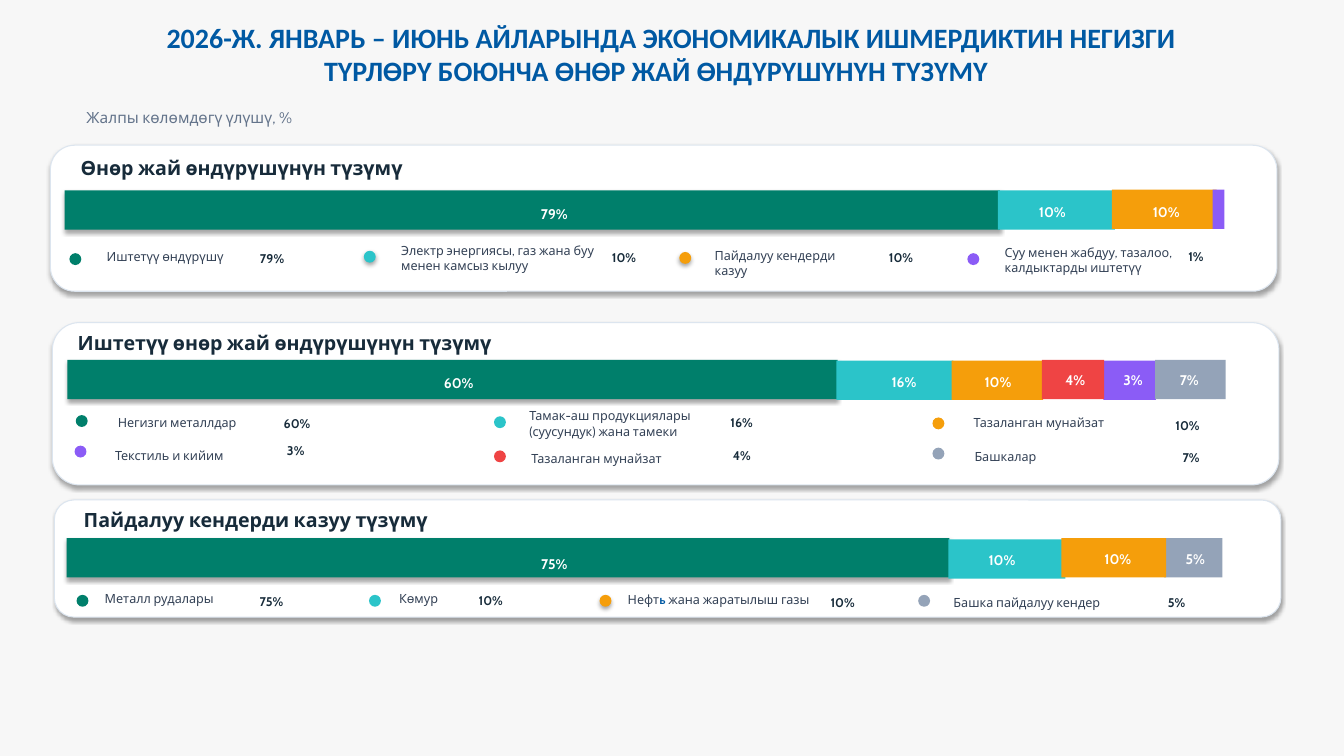
import pptx
import pptx.util
import pptx.dml.color
import pptx.enum.shapes
import pptx.enum.text
import lxml.etree
from pptx.util import Cm

HUES = {
    "back": "F7F7F7", "white": "FFFFFF", "edge": "DCE5EF", "blue": "0059A3",
    "ink": "172B3A", "text": "334155", "note": "64748B",
    "green": "007F6B", "teal": "2BC4C9", "gold": "F59E0B",
    "violet": "8B5CF6", "red": "EF4444", "grey": "94A3B8",
}
RGB = {k: pptx.dml.color.RGBColor.from_string(v) for k, v in HUES.items()}
KIND = pptx.enum.shapes.MSO_SHAPE
SIDE = pptx.enum.text.PP_ALIGN
SHADE = (
    '<a:effectLst xmlns:a="http://schemas.openxmlformats.org/drawingml/2006/main">'
    '<a:outerShdw blurRad="39370" dist="22860" dir="5400000" algn="tl" rotWithShape="0">'
    '<a:srgbClr val="000000"><a:alpha val="35000"/></a:srgbClr>'
    '</a:outerShdw></a:effectLst>'
)

deck = pptx.Presentation()
deck.slide_width, deck.slide_height = Cm(33.87), Cm(19.05)
slide = deck.slides.add_slide(deck.slide_layouts[6])
slide.background.fill.solid()
slide.background.fill.fore_color.rgb = RGB["back"]


def draw(kind, x, y, w, h, hue, edge=None, shade=False):
    shape = slide.shapes.add_shape(kind, Cm(x), Cm(y), Cm(w), Cm(h))
    shape.fill.solid()
    shape.fill.fore_color.rgb = RGB[hue]
    if edge:
        shape.line.color.rgb = RGB[edge]
        shape.line.width = pptx.util.Pt(0.75)
    else:
        shape.line.fill.background()
    shape.shadow.inherit = False
    if shade:
        props = shape.shadow._element
        old = props.find(pptx.oxml.ns.qn("a:effectLst"))
        props.replace(old, lxml.etree.fromstring(SHADE))


def write(words, x, y, w, size, hue, bold=False, side=SIDE.LEFT, h=0.43, font="Cabin"):
    """Place text; a part between bars is set in bold blue."""
    box = slide.shapes.add_textbox(Cm(x), Cm(y), Cm(w), Cm(h))
    frame = box.text_frame
    frame.word_wrap = True
    frame.margin_left = frame.margin_right = frame.margin_top = frame.margin_bottom = 0
    parts = words.split("|")
    frame.text = parts[0]
    for part in parts[1:]:
        frame.paragraphs[-1].add_run().text = part
    for para in frame.paragraphs:
        para.alignment = side
        for i, run in enumerate(para.runs):
            mark = i % 2 == 1
            run.font.name = "Calibri" if mark else font
            run.font.size = pptx.util.Pt(size)
            run.font.bold = bold or mark
            run.font.color.rgb = RGB["blue" if mark else hue]
    return frame


# Heading
head = write(
    "2026-Ж. ЯНВАРЬ – ИЮНЬ АЙЛАРЫНДА ЭКОНОМИКАЛЫК ИШМЕРДИКТИН НЕГИЗГИ "
    "ТҮРЛӨРҮ БОЮНЧА ӨНӨР ЖАЙ ӨНДҮРҮШҮНҮН ТҮЗҮМҮ",
    3, 0.33, 27.08, 20, "blue", True, SIDE.CENTER, 2.06, "Calibri")
head.vertical_anchor = pptx.enum.text.MSO_ANCHOR.MIDDLE
head.paragraphs[0]._p.get_or_add_pPr().set("indent", str(Cm(0.76)))
write("Жалпы көлөмдөгү үлүшү, %", 2.18, 2.72, 30.68, 11, "note")

# Panels: card (x, y, h), title (words, x, y),
# bars (hue, x, y, w, share, label centre, label y),
# keys (hue, dot x, dot y, shade, words, x, y, share, right edge, share y)
panels = [
    ((1.27, 3.66, 3.68), ("Өнөр жай өндүрүшүнүн түзүмү", 2.03, 3.94), [
        ("green", 1.63, 4.8, 23.57, 79, 13.97, 5.18),
        ("teal", 25.15, 4.8, 2.95, 10, 26.52, 5.13),
        ("gold", 28.02, 4.78, 2.64, 10, 29.39, 5.13),
        ("violet", 30.56, 4.78, 0.3, None, 0, 0),
    ], [
        ("green", 1.75, 6.38, False, "Иштетүү өндүрүшү", 2.69, 6.27, 79, 7.16, 6.32),
        ("teal", 9.17, 6.32, True, "Электр энергиясы, газ жана буу менен камсыз кылуу",
         10.11, 6.12, 10, 16.03, 6.3),
        ("gold", 17.12, 6.35, True, "Пайдалуу кендерди\nказуу",
         18.01, 6.25, 10, 23.01, 6.3),
        ("violet", 24.38, 6.38, False, "Суу менен жабдуу, тазалоо, калдыктарды иштетүү",
         25.32, 6.17, 1, 30.33, 6.27),
    ]),
    ((1.32, 8.13, 4.09), ("Иштетүү өнөр жай өндүрүшүнүн түзүмү", 1.96, 8.33), [
        ("green", 1.7, 9.07, 19.41, 60, 11.56, 9.45),
        ("teal", 21.08, 9.09, 2.95, 16, 22.78, 9.4),
        ("gold", 23.98, 9.09, 2.31, 10, 25.15, 9.42),
        ("violet", 27.81, 9.09, 1.32, 3, 28.55, 9.37),
        ("red", 26.26, 9.07, 1.57, 4, 27.1, 9.35),
        ("grey", 29.11, 9.07, 1.78, 7, 29.97, 9.35),
    ], [
        ("green", 1.91, 10.46, False, "Негизги металлдар", 2.97, 10.46, 60, 7.82, 10.49),
        ("violet", 1.88, 11.23, False, "Текстиль и кийим", 2.9, 11.28, 3, 7.67, 11.15),
        ("teal", 12.45, 10.49, False, "Тамак-аш продукциялары (суусундук) жана тамеки",
         13.34, 10.29, 16, 18.97, 10.46),
        ("red", 12.45, 11.35, False, "Тазаланган мунайзат", 13.39, 11.35, 4, 18.92, 11.28),
        ("gold", 23.5, 10.52, False, "Тазаланган мунайзат", 24.54, 10.46, 10, 30.23, 10.54),
        ("grey", 23.5, 11.28, False, "Башкалар", 24.56, 11.3, 7, 30.23, 11.33),
    ]),
    ((1.37, 12.6, 2.95), ("Пайдалуу кендерди казуу түзүмү", 2.11, 12.8), [
        ("green", 1.68, 13.56, 22.25, 75, 13.97, 14),
        ("grey", 29.34, 13.56, 1.47, 5, 30.12, 13.87),
        ("teal", 23.9, 13.59, 2.95, 10, 25.25, 13.89),
        ("gold", 26.75, 13.56, 2.64, 10, 28.17, 13.87),
    ], [
        ("green", 1.93, 14.99, False, "Металл рудалары", 2.64, 14.88, 75, 7.14, 14.96),
        ("teal", 9.3, 14.99, False, "Көмур", 10.06, 14.88, 10, 12.67, 14.94),
        ("gold", 15.11, 14.99, True, "Нефт|ь |жана жаратылыш газы",
         15.82, 14.92, 10, 21.54, 14.99),
        ("grey", 23.14, 14.99, False, "Башка пайдалуу кендер", 24.03, 14.98, 5, 29.87, 14.99),
    ]),
]

for (left, top, tall), (title, tx, ty), bars, keys in panels:
    draw(KIND.ROUNDED_RECTANGLE, left, top, 30.91, tall, "white", "edge", True)
    write(title, tx, ty, 14.8, 14, "ink", True, h=0.61)

    # Stacked bar
    for hue, x, y, w, *_ in bars:
        draw(KIND.RECTANGLE, x, y, w, 0.99, hue, shade=hue == "green")
    for *_, share, mid, y in bars:
        if share:
            write(f"{share}%", mid - 1.32, y, 2.64, 10, "white", True, SIDE.CENTER)

    # Legend
    for hue, dx, dy, shade, words, x, y, share, end, sy in keys:
        draw(KIND.OVAL, dx, dy, 0.3, 0.3, hue, shade=shade)
        write(words, x, y, 5.28, 9, "text")
        write(f"{share}%", end - 1.35, sy, 1.35, 9, "ink", True, SIDE.RIGHT)

deck.save("out.pptx")
